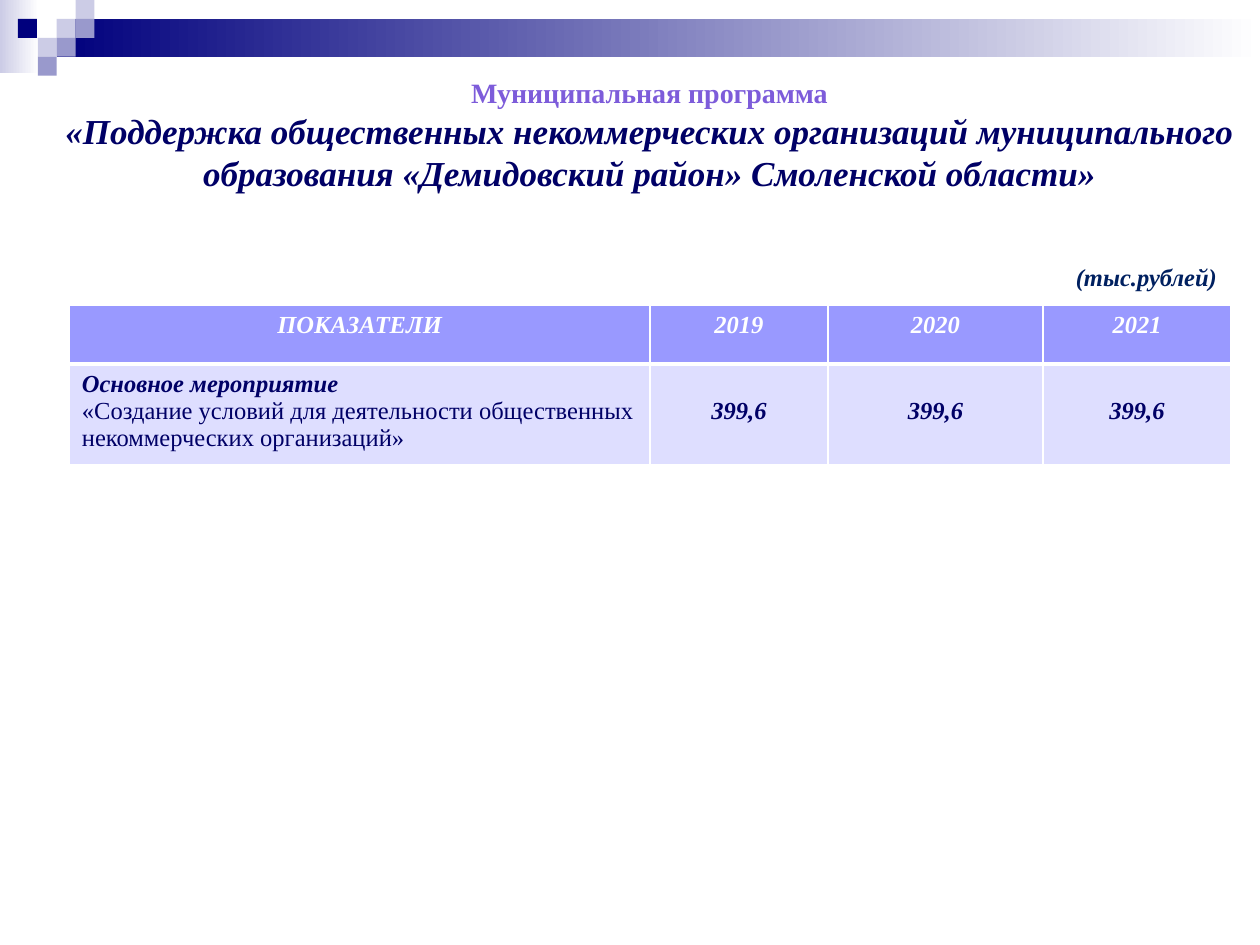
from lxml.etree import SubElement
from pptx import Presentation
from pptx.dml.color import RGBColor
from pptx.enum.shapes import MSO_SHAPE
from pptx.enum.text import MSO_ANCHOR, PP_ALIGN
from pptx.oxml.ns import qn
from pptx.util import Inches, Pt

NAVY = RGBColor(0x00, 0x00, 0x7D)
LAVENDER = RGBColor(0xCC, 0xCC, 0xE6)
MAUVE = RGBColor(0x99, 0x99, 0xCC)
WHITE = RGBColor(0xFF, 0xFF, 0xFF)
VIOLET = RGBColor(0x7D, 0x5C, 0xDA)
INK = RGBColor(0x00, 0x00, 0x66)
UNIT_BLUE = RGBColor(0x00, 0x20, 0x60)
HEADER_FILL = RGBColor(0x99, 0x99, 0xFF)
BODY_FILL = RGBColor(0xDE, 0xDE, 0xFF)

FONT = "Times New Roman"
CENTER = PP_ALIGN.CENTER

# Left, top, width, height, first colour of a fade to white
BANDS = [(0, 0, 0.31, 0.58, LAVENDER), (0.45, 0.15, 9.55, 0.3, NAVY)]
# Column, row, colour on a grid of small squares
TILE = 0.15
TILES = [(3, 1, LAVENDER), (4, 0, LAVENDER), (4, 1, MAUVE), (2, 2, LAVENDER),
         (0.95, 1, NAVY), (3, 2, MAUVE), (2, 3, MAUVE)]

# Each line: text, format
TITLE = [
    ("Муниципальная программа", dict(size=Pt(16), bold=True, color=VIOLET)),
    ("«Поддержка общественных некоммерческих организаций муниципального "
     "образования «Демидовский район» Смоленской области»",
     dict(size=Pt(20), bold=True, italic=True, color=INK)),
]
STRONG = dict(size=Pt(14), bold=True, italic=True, color=INK)
PLAIN = dict(size=Pt(14), bold=False, italic=False, color=INK)
HEADING = STRONG | dict(color=WHITE)
UNIT = [("(тыс.рублей)", STRONG | dict(color=UNIT_BLUE))]

HEADER = ["ПОКАЗАТЕЛИ", "2019", "2020", "2021"]
MEASURE = [
    ("Основное мероприятие", STRONG),
    ("«Создание условий для деятельности общественных "
     "некоммерческих организаций»", PLAIN),
]
AMOUNTS = ["399,6", "399,6", "399,6"]
COLUMN_WIDTHS = [4.61, 1.41, 1.71, 1.49]
ROW_HEIGHTS = [0.47, 0.79]


def write(frame, lines, align):
    for index, (text, style) in enumerate(lines):
        paragraph = frame.add_paragraph() if index else frame.paragraphs[0]
        paragraph.alignment = align
        run = paragraph.add_run()
        run.text = text
        run.font.name = FONT
        for key, value in style.items():
            if key == "color":
                run.font.color.rgb = value
            else:
                setattr(run.font, key, value)


def add_text(slide, box, lines, align, wrap):
    frame = slide.shapes.add_textbox(*map(Inches, box)).text_frame
    frame.word_wrap = wrap
    write(frame, lines, align)


def add_block(slide, box, color, fades=False):
    block = slide.shapes.add_shape(MSO_SHAPE.RECTANGLE, *map(Inches, box))
    block.shadow.inherit = False
    block.line.fill.background()
    if fades:
        block.fill.gradient()
        block.fill.gradient_angle = 0
        for stop, stop_color in zip(block.fill.gradient_stops, (color, WHITE)):
            stop.color.rgb = stop_color
    else:
        block.fill.solid()
        block.fill.fore_color.rgb = color


def style_cell(cell, fill, bottom_width):
    """Draw white borders and fill the cell; borders must precede the fill."""
    properties = cell._tc.get_or_add_tcPr()
    for side, width in dict(L=1, R=1, T=1, B=bottom_width).items():
        border = SubElement(properties, qn(f"a:ln{side}"), w=str(Pt(width)))
        color = SubElement(border, qn("a:solidFill"))
        SubElement(color, qn("a:srgbClr"), val=str(WHITE))
    cell.fill.solid()
    cell.fill.fore_color.rgb = fill


def add_budget_table(slide):
    rows = [
        [[(label, HEADING)] for label in HEADER],
        [MEASURE] + [[(amount, STRONG)] for amount in AMOUNTS],
    ]
    table = slide.shapes.add_table(
        len(rows), len(HEADER), Inches(0.55), Inches(2.42),
        Inches(sum(COLUMN_WIDTHS)), Inches(sum(ROW_HEIGHTS))).table
    for column, width in zip(table.columns, COLUMN_WIDTHS):
        column.width = Inches(width)
    for row, height in zip(table.rows, ROW_HEIGHTS):
        row.height = Inches(height)
    for r, row in enumerate(rows):
        for c, lines in enumerate(row):
            cell = table.cell(r, c)
            is_amount = r > 0 and c > 0
            if is_amount:
                cell.vertical_anchor = MSO_ANCHOR.MIDDLE
                cell.margin_bottom = Inches(0.11)
            write(cell.text_frame, lines,
                  CENTER if r == 0 or is_amount else PP_ALIGN.LEFT)
            style_cell(cell, BODY_FILL if r else HEADER_FILL, 1 if r else 3)
    for c in range(len(HEADER)):
        top = table.cell(1, c)._tc.tcPr.find(qn("a:lnT"))
        top.set("w", str(Pt(3)))


def main():
    deck = Presentation()
    deck.slide_width, deck.slide_height = Inches(10), Inches(7.5)
    slide = deck.slides.add_slide(deck.slide_layouts[6])
    for *box, color in BANDS:
        add_block(slide, box, color, fades=True)
    for column, row, color in TILES:
        add_block(slide, (column * TILE, row * TILE, TILE, TILE), color)
    add_text(slide, (0.31, 0.55, 9.69, 1.04), TITLE, CENTER, True)
    add_budget_table(slide)
    add_text(slide, (8.44, 2.03, 1.33, 0.34), UNIT, PP_ALIGN.LEFT, False)
    deck.save("out.pptx")


if __name__ == "__main__":
    main()
